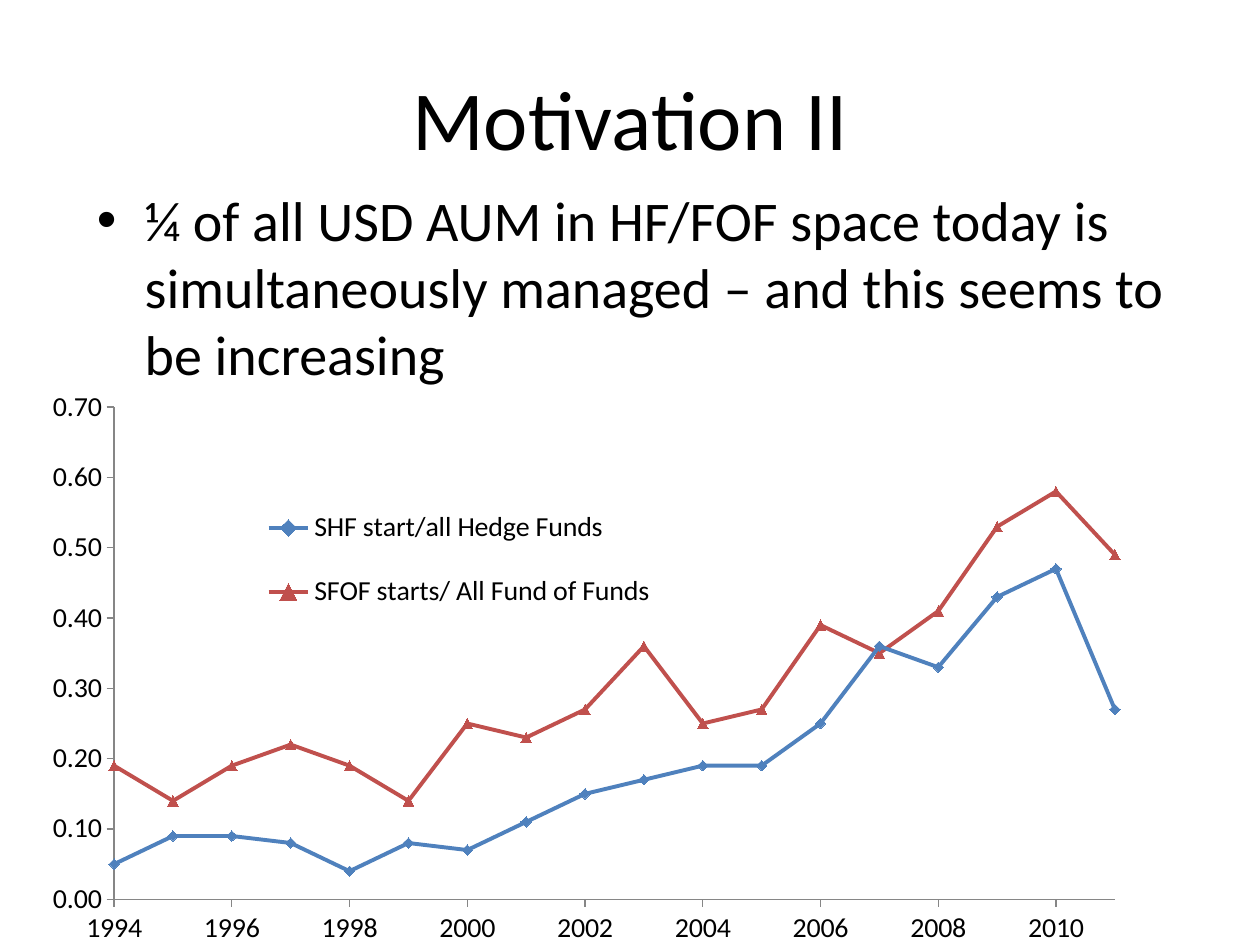
import pptx
import pptx.chart.data
import pptx.dml.color
import pptx.enum.chart
import pptx.enum.text
import pptx.oxml
import pptx.oxml.ns
import pptx.util
from pptx.util import Inches

COLORS = {"text": "000000", "axis": "868686", "hedge": "4F81BD", "fund": "C0504D"}
FONT = "Calibri"
FIRST_YEAR, LAST_YEAR = 1994, 2011
MARKERS = pptx.enum.chart.XL_MARKER_STYLE
SERIES = [
    ("SHF start/all Hedge Funds", "hedge", MARKERS.DIAMOND,
     [0.05, 0.09, 0.09, 0.08, 0.04, 0.08, 0.07, 0.11, 0.15,
      0.17, 0.19, 0.19, 0.25, 0.36, 0.33, 0.43, 0.47, 0.27]),
    ("SFOF starts/ All Fund of Funds", "fund", MARKERS.TRIANGLE,
     [0.19, 0.14, 0.19, 0.22, 0.19, 0.14, 0.25, 0.23, 0.27,
      0.36, 0.25, 0.27, 0.39, 0.35, 0.41, 0.53, 0.58, 0.49]),
]


def color(name):
    return pptx.dml.color.RGBColor.from_string(COLORS[name])


def format_font(font, size):
    font.name = FONT
    font.size = pptx.util.Pt(size)
    font.color.rgb = color("text")


def set_title(slide, text):
    title = slide.shapes.title
    title.left, title.top = Inches(0.5), Inches(0.3)
    title.width, title.height = Inches(9), Inches(1.25)
    frame = title.text_frame
    frame.text = text
    frame.vertical_anchor = pptx.enum.text.MSO_ANCHOR.MIDDLE
    paragraph = frame.paragraphs[0]
    paragraph.alignment = pptx.enum.text.PP_ALIGN.CENTER
    format_font(paragraph.runs[0].font, 48)


def add_bullet(slide, text):
    box = slide.shapes.add_textbox(Inches(0.67), Inches(1.42), Inches(9.08), Inches(5.58))
    frame = box.text_frame
    frame.word_wrap = True
    frame.text = text
    paragraph = frame.paragraphs[0]
    format_font(paragraph.runs[0].font, 32)
    paragraph.space_before = pptx.util.Pt(6.4)
    properties = paragraph._p.get_or_add_pPr()
    properties.set("marL", str(Inches(0.38)))
    properties.set("indent", str(Inches(-0.38)))
    namespace = pptx.oxml.ns.nsdecls("a")
    for markup in (f'<a:buFont {namespace} typeface="Arial"/>',
                   f'<a:buChar {namespace} char="•"/>'):
        properties.append(pptx.oxml.parse_xml(markup))


def set_layout(element, position, values, inner=False):
    for layout in element.findall(pptx.oxml.ns.qn("c:layout")):
        element.remove(layout)
    parts = '<c:layoutTarget val="inner"/>' if inner else ""
    parts += '<c:xMode val="edge"/><c:yMode val="edge"/>'
    parts += "".join(f'<c:{key} val="{value}"/>' for key, value in zip("xywh", values))
    element.insert(position, pptx.oxml.parse_xml(
        f'<c:layout {pptx.oxml.ns.nsdecls("c")}>'
        f"<c:manualLayout>{parts}</c:manualLayout></c:layout>"))


def format_axis(axis, minimum, maximum, unit, number_format):
    axis.minimum_scale, axis.maximum_scale = minimum, maximum
    axis.major_unit = unit
    axis.has_major_gridlines = False
    axis.major_tick_mark = pptx.enum.chart.XL_TICK_MARK.OUTSIDE
    axis.minor_tick_mark = pptx.enum.chart.XL_TICK_MARK.NONE
    axis.tick_labels.number_format = number_format
    axis.tick_labels.number_format_is_linked = False
    axis.format.line.color.rgb = color("axis")
    axis.format.line.width = pptx.util.Pt(0.75)


def format_series(series, color_name, marker_style):
    series.smooth = False
    series.format.line.color.rgb = color(color_name)
    series.format.line.width = pptx.util.Pt(2.25)
    marker = series.marker
    marker.style = marker_style
    marker.size = 6
    marker.format.fill.solid()
    marker.format.fill.fore_color.rgb = color(color_name)
    marker.format.line.color.rgb = color(color_name)


def add_share_chart(slide):
    data = pptx.chart.data.XyChartData(number_format="0.00")
    for name, _, _, values in SERIES:
        series = data.add_series(name)
        for year, value in enumerate(values, FIRST_YEAR):
            series.add_data_point(year, value)
    chart = slide.shapes.add_chart(
        pptx.enum.chart.XL_CHART_TYPE.XY_SCATTER_LINES,
        Inches(0.42), Inches(3.08), Inches(9.17), Inches(4.42), data).chart
    chart.has_title = False
    format_font(chart.font, 16)
    chart.plots[0].vary_by_categories = False
    for series, (_, color_name, marker_style, _) in zip(chart.plots[0].series, SERIES):
        format_series(series, color_name, marker_style)
    format_axis(chart.category_axis, FIRST_YEAR, LAST_YEAR, 2, "0")
    format_axis(chart.value_axis, 0, 0.7, 0.1, "0.00")
    chart.has_legend = True
    chart.legend.position = pptx.enum.chart.XL_LEGEND_POSITION.RIGHT
    chart.legend.include_in_layout = False
    set_layout(chart.legend._element, 1, (0.12, 0.17, 0.46, 0.29))
    plot_area = chart._chartSpace.chart.plotArea
    set_layout(plot_area, 0, (0.051, 0.035, 0.868, 0.902), inner=True)


def main():
    presentation = pptx.Presentation()
    presentation.slide_width = Inches(10)
    presentation.slide_height = Inches(7.5)
    slide = presentation.slides.add_slide(presentation.slide_layouts[5])
    set_title(slide, "Motivation II")
    add_bullet(slide, "¼ of all USD AUM in HF/FOF space today is simultaneously "
                      "managed – and this seems to be increasing")
    add_share_chart(slide)
    presentation.save("out.pptx")


if __name__ == "__main__":
    main()
